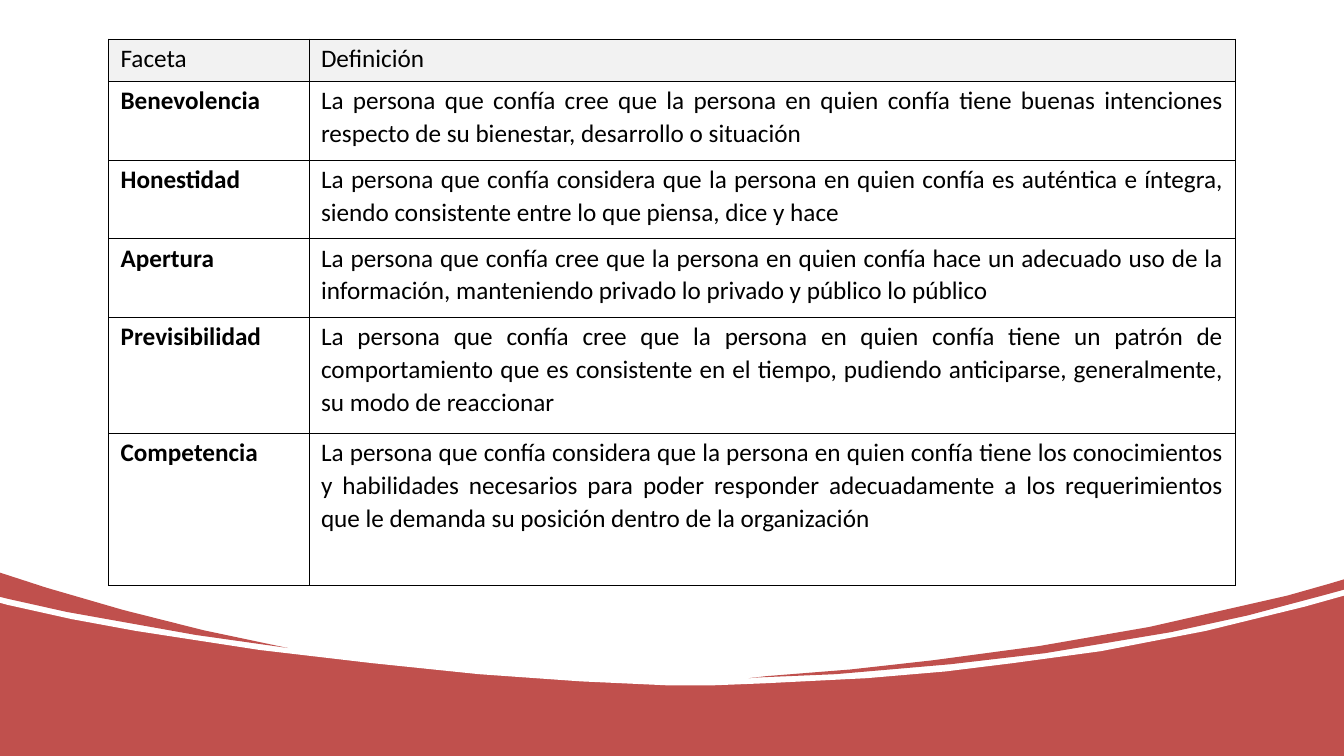
from dataclasses import dataclass

from lxml import etree
from pptx import Presentation
from pptx import util as u
from pptx.dml.color import RGBColor
from pptx.enum import shapes, text
from pptx.oxml.ns import qn


@dataclass(frozen=True)
class Theme:
    red: str = "C0504D"
    white: str = "FFFFFF"
    header: str = "F2F2F2"
    ink: str = "000000"
    font: str = "Calibri"
    size: int = 18
    border: int = 1


T = Theme()
WIDTH, HEIGHT = 33.87, 19.05

# Outlines in centimetres
WHITE_AREA = [
    (0, 0), (0, 15.19), (0.18, 15.24), (1.8, 15.6), (3.43, 15.9), (6.55, 16.38),
    (9.37, 16.71), (12.07, 16.99), (14.63, 17.17), (16.81, 17.27), (17.98, 17.27),
    (19.25, 17.22), (21.84, 17.09), (23.83, 16.92), (25.53, 16.71), (27.74, 16.41),
    (30.38, 15.9), (32.87, 15.29), (WIDTH, 15.01), (WIDTH, 0),
]
LEFT_SWEEP = [
    (0, 14.43), (1.17, 14.81), (3.1, 15.37), (5.12, 15.88), (7.16, 16.31),
    (7.26, 16.33), (4.93, 16), (1.68, 15.42), (0.2, 15.09), (0, 15.04),
]
RIGHT_SWEEP = [
    (18.87, 17.09), (19.3, 17.04), (21.44, 16.87), (23.5, 16.64), (26.19, 16.28),
    (28.96, 15.8), (32.44, 15.01), (33.5, 14.71), (WIDTH, 14.6), (WIDTH, 14.86),
    (33.32, 15.01), (31.44, 15.51), (29.51, 15.93), (26.34, 16.46),
    (23.95, 16.74), (21.06, 16.99), (19.13, 17.07),
]

ROWS = [
    (1.07, "Faceta", "Definición"),
    (1.98, "Benevolencia",
     "La persona que confía cree que la persona en quien confía tiene buenas "
     "intenciones respecto de su bienestar, desarrollo o situación"),
    (1.98, "Honestidad",
     "La persona que confía considera que la persona en quien confía es auténtica "
     "e íntegra, siendo consistente entre lo que piensa, dice y hace"),
    (1.98, "Apertura",
     "La persona que confía cree que la persona en quien confía hace un adecuado "
     "uso de la información, manteniendo privado lo privado y público lo público"),
    (2.92, "Previsibilidad",
     "La persona que confía cree que la persona en quien confía tiene un patrón de "
     "comportamiento que es consistente en el tiempo, pudiendo anticiparse, "
     "generalmente, su modo de reaccionar"),
    (3.84, "Competencia",
     "La persona que confía considera que la persona en quien confía tiene los "
     "conocimientos y habilidades necesarios para poder responder adecuadamente a "
     "los requerimientos que le demanda su posición dentro de la organización"),
]
COLUMNS = (5.05, 23.34)


def paint(sp, color):
    """Give a shape a flat fill with no outline or shadow."""
    sp.shadow.inherit = False
    sp.fill.solid()
    sp.fill.fore_color.rgb = RGBColor.from_string(color)
    sp.line.fill.background()


def add_borders(cell):
    tc_pr = cell._tc.get_or_add_tcPr()
    for i, side in enumerate(("lnL", "lnR", "lnT", "lnB")):
        ln = etree.Element(qn(f"a:{side}"), w=str(u.Pt(T.border)))
        fill = etree.SubElement(ln, qn("a:solidFill"))
        etree.SubElement(fill, qn("a:srgbClr"), val=T.ink)
        tc_pr.insert(i, ln)


prs = Presentation()
prs.slide_width, prs.slide_height = u.Cm(WIDTH), u.Cm(HEIGHT)
s = prs.slides.add_slide(prs.slide_layouts[6])

backdrop = s.shapes.add_shape(
    shapes.MSO_SHAPE.RECTANGLE, 0, 0, u.Cm(WIDTH), u.Cm(HEIGHT))
paint(backdrop, T.red)

for outline, color in ((WHITE_AREA, T.white), (LEFT_SWEEP, T.red), (RIGHT_SWEEP, T.red)):
    start, *rest = [(u.Cm(x), u.Cm(y)) for x, y in outline]
    builder = s.shapes.build_freeform(*start)
    builder.add_line_segments(rest, close=True)
    paint(builder.convert_to_shape(), color)

table = s.shapes.add_table(
    len(ROWS), len(COLUMNS), u.Cm(2.74), u.Cm(0.99),
    u.Cm(sum(COLUMNS)), u.Cm(sum(row[0] for row in ROWS))).table
table.first_row = table.horz_banding = False
for column, width in zip(table.columns, COLUMNS):
    column.width = u.Cm(width)

for i, (height, *words) in enumerate(ROWS):
    table.rows[i].height = u.Cm(height)
    for j, wording in enumerate(words):
        cell = table.cell(i, j)
        cell.margin_left = cell.margin_right = u.Cm(0.3)
        cell.margin_top, cell.margin_bottom = u.Cm(0.05), 0
        if i == 0:
            cell.fill.solid()
            cell.fill.fore_color.rgb = RGBColor.from_string(T.header)
        else:
            cell.fill.background()
        add_borders(cell)
        p = cell.text_frame.paragraphs[0]
        p.text = wording
        p.alignment = text.PP_ALIGN.JUSTIFY
        p.line_spacing = 1.07
        p.space_after = u.Pt(8)
        p.font.name, p.font.size = T.font, u.Pt(T.size)
        p.font.bold = i > 0 and j == 0
        p.font.color.rgb = RGBColor.from_string(T.ink)

prs.save("out.pptx")
